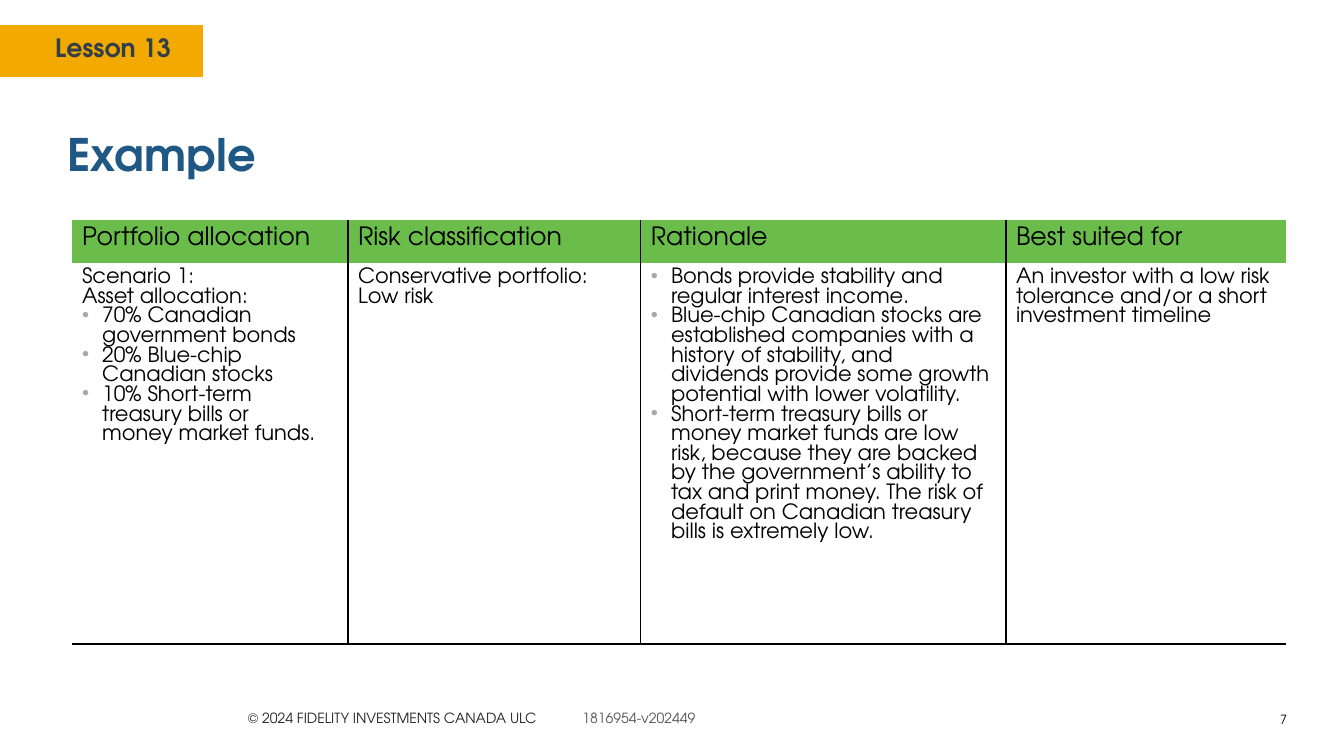
import pptx
import pptx.dml.color
import pptx.enum.shapes
import pptx.enum.text
import pptx.oxml.ns
import pptx.util
from lxml import etree

Pt = pptx.util.Pt
RGBColor = pptx.dml.color.RGBColor
Align = pptx.enum.text.PP_ALIGN
Anchor = pptx.enum.text.MSO_ANCHOR
qn = pptx.oxml.ns.qn

FONT = "TeX Gyre Adventor"
BLACK = RGBColor(0x00, 0x00, 0x00)
BLUE = RGBColor(0x20, 0x58, 0x85)
AMBER = RGBColor(0xF2, 0xA9, 0x00)
SLATE = RGBColor(0x33, 0x3F, 0x48)
GREEN = RGBColor(0x6A, 0xBD, 0x4A)
BULLET_GREY = RGBColor(0xA2, 0xAA, 0xAD)
FOOTER_DARK = RGBColor(0x22, 0x22, 0x22)
FOOTER_GREY = RGBColor(0x54, 0x54, 0x54)
NO_STYLE = "{2D5ABB26-0587-4C30-8999-92F81FD0307C}"

COLUMN_WIDTHS = (197.2, 209.2, 260.8, 200.4)
ROW_HEIGHTS = (31, 272)
HEADINGS = ("Portfolio allocation", "Risk classification", "Rationale", "Best suited for")
DETAILS = (
    (
        ("Scenario 1:", False),
        ("Asset allocation:", False),
        ("70% Canadian government bonds", True),
        ("20% Blue-chip\vCanadian stocks", True),
        ("10% Short-term\vtreasury bills or\vmoney market funds.", True),
    ),
    (("Conservative portfolio:\vLow risk", False),),
    (
        ("Bonds provide stability and regular interest income.", True),
        ("Blue-chip Canadian stocks are established companies with a history of "
         "stability, and dividends provide some growth potential with lower volatility.", True),
        ("Short-term treasury bills or money market funds are low risk, because they are "
         "backed by the government’s ability to tax and print money. The risk of default "
         "on Canadian treasury bills is extremely low.", True),
    ),
    (("An investor with a low risk tolerance and/or a short investment timeline", False),),
)


def add_element(parent, tag, **attributes):
    return etree.SubElement(parent, qn(tag), **attributes)


def write(paragraph, text, *, size, color=BLACK, bold=False, align=Align.LEFT,
          spacing=0.9, bullet=False):
    paragraph.text = text
    paragraph.alignment = align
    paragraph.line_spacing = spacing
    if bullet:
        properties = paragraph._p.get_or_add_pPr()
        indent = Pt(14.4)
        properties.set("marL", str(indent))
        properties.set("indent", str(-indent))
        bullet_color = add_element(properties, "a:buClr")
        add_element(bullet_color, "a:srgbClr", val=str(BULLET_GREY))
        add_element(properties, "a:buChar", char="•")
    for run in paragraph.runs:
        format_run(run, size, color, bold)


def format_run(run, size, color, bold=False):
    run.font.name = FONT
    run.font.size = Pt(size)
    run.font.bold = bold
    run.font.color.rgb = color


def add_text(slide, left, top, width, height, text, anchor=Anchor.TOP, **text_format):
    box = slide.shapes.add_textbox(Pt(left), Pt(top), Pt(width), Pt(height))
    box.text_frame.word_wrap = True
    box.text_frame.vertical_anchor = anchor
    paragraph = box.text_frame.paragraphs[0]
    write(paragraph, text, **text_format)
    return paragraph


def add_lesson_tag(slide):
    tag = slide.shapes.add_shape(
        pptx.enum.shapes.MSO_SHAPE.RECTANGLE, Pt(0), Pt(18), Pt(145), Pt(37))
    tag.shadow.inherit = False
    tag.fill.solid()
    tag.fill.fore_color.rgb = AMBER
    tag.line.fill.background()
    add_text(slide, 32.4, 22.3, 113, 29, "Lesson 13", size=18, color=SLATE, bold=True)


def format_title(slide):
    title = slide.shapes.title
    title.left, title.top, title.width, title.height = Pt(41), Pt(91.5), Pt(878), Pt(52.5)
    title.text_frame.vertical_anchor = Anchor.TOP
    write(title.text_frame.paragraphs[0], "Example", size=32, color=BLUE, bold=True)


def add_footer(slide):
    paragraph = add_text(slide, 170, 504.7, 480, 19.5,
                         "© 2024 FIDELITY INVESTMENTS CANADA ULC", size=10, color=FOOTER_DARK)
    tabs = add_element(paragraph._p.get_or_add_pPr(), "a:tabLst")
    add_element(tabs, "a:tab", pos=str(Pt(239)), algn="l")
    code = paragraph.add_run()
    code.text = "\t1816954-v202449"
    format_run(code, 10, FOOTER_GREY)
    add_text(slide, 876, 508, 50.4, 13, "7", anchor=Anchor.MIDDLE, size=9, align=Align.RIGHT)


def set_borders(cell, sides):
    properties = cell._tc.get_or_add_tcPr()
    for side in "LRTB":
        if side in sides:
            line = add_element(properties, f"a:ln{side}", w=str(Pt(1)))
            fill = add_element(line, "a:solidFill")
            add_element(fill, "a:srgbClr", val=str(BLACK))


def fill_cell(cell, items, **text_format):
    frame = cell.text_frame
    for index, (text, bullet) in enumerate(items):
        paragraph = frame.add_paragraph() if index else frame.paragraphs[0]
        write(paragraph, text, bullet=bullet, **text_format)


def add_portfolio_table(slide):
    frame = slide.shapes.add_table(
        2, len(HEADINGS), Pt(51.4), Pt(157), Pt(sum(COLUMN_WIDTHS)), Pt(sum(ROW_HEIGHTS)))
    table = frame.table
    table.first_row = False
    table.horz_banding = False
    table._tbl.tblPr.find(qn("a:tableStyleId")).text = NO_STYLE
    for row, height in zip(table.rows, ROW_HEIGHTS):
        row.height = Pt(height)
    last = len(HEADINGS) - 1
    for index, (width, heading, details) in enumerate(zip(COLUMN_WIDTHS, HEADINGS, DETAILS)):
        table.columns[index].width = Pt(width)
        sides = ("L" if index > 0 else "") + ("R" if index < last else "")
        header, body = table.cell(0, index), table.cell(1, index)
        set_borders(header, sides)
        set_borders(body, sides + "B")
        header.fill.solid()
        header.fill.fore_color.rgb = GREEN
        body.fill.background()
        fill_cell(header, [(heading, False)], size=18, spacing=Pt(18))
        fill_cell(body, details, size=15, spacing=Pt(14))


def main():
    presentation = pptx.Presentation()
    presentation.slide_width = Pt(960)
    presentation.slide_height = Pt(540)
    slide = presentation.slides.add_slide(presentation.slide_layouts[5])
    add_lesson_tag(slide)
    format_title(slide)
    add_footer(slide)
    add_portfolio_table(slide)
    presentation.save("out.pptx")


if __name__ == "__main__":
    main()
